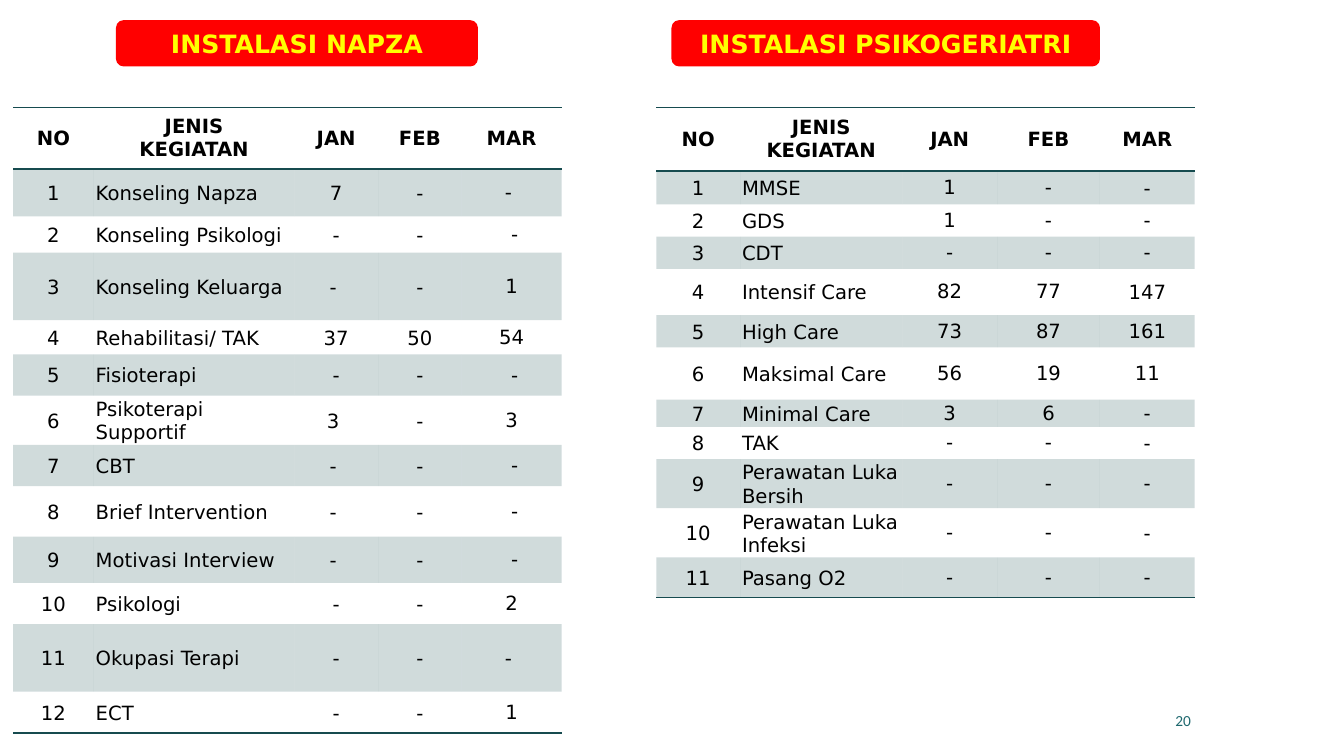
from lxml import etree
from pptx import Presentation
from pptx.dml.color import RGBColor
from pptx.enum import shapes, text
from pptx.oxml.ns import qn
from pptx.util import Inches, Pt

RED = RGBColor(0xFF, 0x00, 0x00)
YELLOW = RGBColor(0xFF, 0xFF, 0x00)
BLACK = RGBColor(0x00, 0x00, 0x00)
DARK_TEAL = RGBColor(0x16, 0x4B, 0x4F)
TEAL = RGBColor(0x1F, 0x69, 0x6F)
FONT = "DejaVu Sans"
PLAIN_TABLE_STYLE = "{2D5ABB26-0587-4C30-8999-92F81FD0307C}"
BAND_OPACITY = 20

HEADINGS = ["NO", "JENIS KEGIATAN", "JAN", "FEB", "MAR"]

NAPZA = [
    ("Konseling Napza", "7", "-", "- "),
    ("Konseling Psikologi", "-", "-", " -"),
    ("Konseling Keluarga", "- ", "-", "1"),
    ("Rehabilitasi/ TAK", "37", "50", "54"),
    ("Fisioterapi", "-", "-", " -"),
    ("Psikoterapi Supportif", "3 ", "-", "3"),
    ("CBT", "- ", "-", " -"),
    ("Brief Intervention", "- ", "-", " -"),
    ("Motivasi Interview", "- ", "-", " -"),
    ("Psikologi", "-", "-", "2"),
    ("Okupasi Terapi", "-", "-", "- "),
    ("ECT", "-", "-", "1"),
]
NAPZA_COLUMNS = [0.8, 1.99, 0.83, 0.83, 0.99]
NAPZA_ROWS = [0.58, 0.47, 0.36, 0.67, 0.34, 0.41, 0.44, 0.41, 0.5, 0.46, 0.41, 0.67, 0.41]

PSIKOGERIATRI = [
    ("MMSE", "1", "-", "-"),
    ("GDS", "1", "-", "-"),
    ("CDT", "-", "-", "-"),
    ("Intensif Care", "82", "77", "147"),
    ("High Care", "73", "87", "161"),
    ("Maksimal Care", "56", "19", "11"),
    ("Minimal Care", "3", "6", "-"),
    ("TAK", "-", "-", "-"),
    ("Perawatan Luka Bersih", "-", "-", "-"),
    ("Perawatan Luka Infeksi", "-", "-", "-"),
    ("Pasang O2", "-", "-", "-"),
]
PSIKOGERIATRI_COLUMNS = [0.83, 1.61, 0.94, 1.02, 0.94]
PSIKOGERIATRI_ROWS = [0.58, 0.33, 0.32, 0.32, 0.46, 0.32, 0.52, 0.27, 0.32, 0.41, 0.39, 0.4]


def write_text(frame, words, size, color, align, font=FONT, bold=False):
    paragraph = frame.paragraphs[0]
    paragraph.alignment = align
    run = paragraph.add_run()
    run.text = words
    run.font.name = font
    run.font.size = Pt(size)
    run.font.bold = bold
    run.font.color.rgb = color


def add_banner(slide, left, top, width, height, title):
    banner = slide.shapes.add_shape(
        shapes.MSO_SHAPE.ROUNDED_RECTANGLE,
        Inches(left), Inches(top), Inches(width), Inches(height))
    banner.shadow.inherit = False
    banner.fill.solid()
    banner.fill.fore_color.rgb = RED
    banner.line.fill.background()
    banner.text_frame.vertical_anchor = text.MSO_ANCHOR.MIDDLE
    write_text(banner.text_frame, title, 18, YELLOW, text.PP_ALIGN.CENTER, bold=True)


def add_rule(cell, side):
    """Draw a 1 pt line on one side ("lnT" or "lnB") of a cell; call before filling it."""
    line = etree.SubElement(cell._tc.get_or_add_tcPr(), qn(f"a:{side}"), w=str(Pt(1)))
    solid = etree.SubElement(line, qn("a:solidFill"))
    etree.SubElement(solid, qn("a:srgbClr"), val=str(DARK_TEAL))


def fill_band(cell):
    cell.fill.solid()
    cell.fill.fore_color.rgb = DARK_TEAL
    color = cell._tc.tcPr.find(qn("a:solidFill")).find(qn("a:srgbClr"))
    etree.SubElement(color, qn("a:alpha"), val=str(BAND_OPACITY * 1000))


def set_margins(cell, side, top, bottom):
    cell.margin_left = cell.margin_right = Inches(side)
    cell.margin_top = Inches(top)
    cell.margin_bottom = Inches(bottom)


def add_activity_table(slide, left, top, columns, heights, activities, header_pad, month_pad):
    """Place a monthly table; the pads are the header's vertical and the JAN/FEB cell margins."""
    rows = [HEADINGS] + [(str(number), *activity)
                         for number, activity in enumerate(activities, 1)]
    table = slide.shapes.add_table(
        len(rows), len(columns), Inches(left), Inches(top),
        Inches(sum(columns)), Inches(sum(heights))).table
    table._tbl.tblPr.find(qn("a:tableStyleId")).text = PLAIN_TABLE_STYLE
    for column, width in zip(table.columns, columns):
        column.width = Inches(width)
    for row, height in zip(table.rows, heights):
        row.height = Inches(height)

    body_pads = [0.02, 0.02, month_pad, month_pad, 0.01]
    for row_index, row in enumerate(rows):
        is_header = row_index == 0
        for column_index, words in enumerate(row):
            cell = table.cell(row_index, column_index)
            cell.vertical_anchor = text.MSO_ANCHOR.MIDDLE
            if is_header:
                set_margins(cell, 0.2, header_pad, header_pad)
                add_rule(cell, "lnT")
            else:
                pad = body_pads[column_index]
                set_margins(cell, pad, pad, 0)
            if is_header or row_index == len(rows) - 1:
                add_rule(cell, "lnB")
            if row_index % 2:
                fill_band(cell)
            else:
                cell.fill.background()
            is_name = column_index == 1 and not is_header
            align = text.PP_ALIGN.LEFT if is_name else text.PP_ALIGN.CENTER
            write_text(cell.text_frame, words, 14, BLACK, align, bold=is_header)


def add_page_number(slide, left, top, width, height, number):
    frame = slide.shapes.add_textbox(
        Inches(left), Inches(top), Inches(width), Inches(height)).text_frame
    frame.word_wrap = True
    frame.vertical_anchor = text.MSO_ANCHOR.MIDDLE
    write_text(frame, number, 11, TEAL, text.PP_ALIGN.RIGHT, font="Calibri")


def main():
    presentation = Presentation()
    presentation.slide_width = Inches(13.33)
    presentation.slide_height = Inches(7.5)
    slide = presentation.slides.add_slide(presentation.slide_layouts[6])
    add_page_number(slide, 8.8, 6.95, 3.11, 0.4, "20")
    add_banner(slide, 1.15, 0.2, 3.59, 0.46, "INSTALASI NAPZA")
    add_activity_table(slide, 0.13, 1.07, NAPZA_COLUMNS, NAPZA_ROWS, NAPZA, 0.07, 0.02)
    add_activity_table(slide, 6.51, 1.07, PSIKOGERIATRI_COLUMNS, PSIKOGERIATRI_ROWS,
                       PSIKOGERIATRI, 0.08, 0)
    add_banner(slide, 6.66, 0.2, 4.25, 0.46, "INSTALASI PSIKOGERIATRI")
    presentation.save("out.pptx")


if __name__ == "__main__":
    main()
